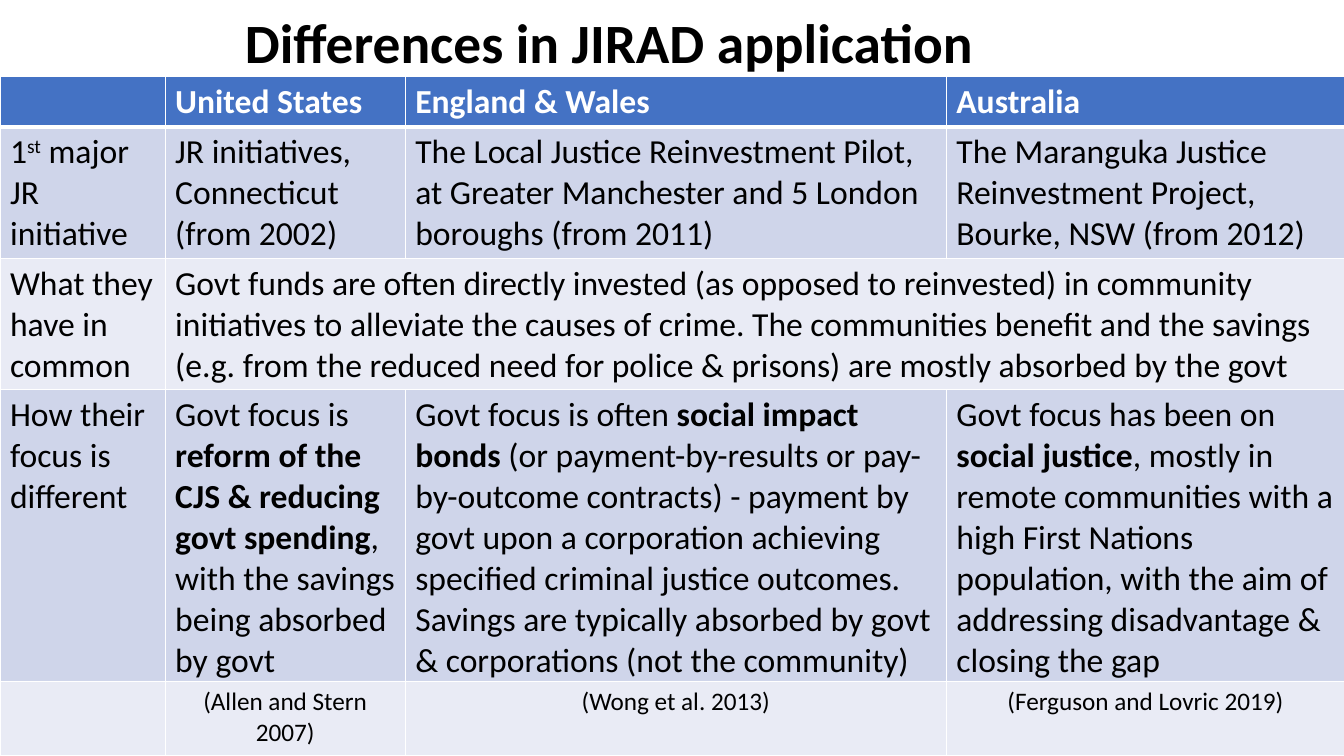
from dataclasses import dataclass
from typing import Any

from lxml.etree import SubElement
from pptx import Presentation
from pptx.dml.color import RGBColor
from pptx.enum.text import MSO_ANCHOR as Anchor, PP_ALIGN as Align
from pptx.oxml.ns import qn
from pptx.util import Pt

BLACK = RGBColor(0x00, 0x00, 0x00)
WHITE = RGBColor(0xFF, 0xFF, 0xFF)
HEADER_BLUE = RGBColor(0x44, 0x72, 0xC4)
BAND_DARK = RGBColor(0xCF, 0xD5, 0xEA)
BAND_LIGHT = RGBColor(0xE9, 0xEB, 0xF5)

COLUMN_WIDTHS = (118, 171.5, 386.5, 284.5)
TABLE_TOP = 54.7
RULE, HEADER_RULE = 1, 3


@dataclass(frozen=True)
class Span:
    text: str
    bold: bool = False
    raised: bool = False


Paragraph = tuple[Span, ...]
Entry = tuple[Paragraph, ...]


@dataclass(frozen=True)
class Row:
    height: float
    fill: RGBColor
    entries: tuple[Entry, ...]
    size: float = 24
    color: RGBColor = BLACK
    align: Align = Align.LEFT


def plain(*lines: str, bold: bool = False) -> Entry:
    return tuple((Span(line, bold),) for line in lines)


def emphasis(before: str, stressed: str, after: str) -> Entry:
    return ((Span(before), Span(stressed, bold=True), Span(after)),)


ROWS = (
    Row(35.5, HEADER_BLUE, (
        (),
        plain("United States", bold=True),
        plain("England & Wales", bold=True),
        plain("Australia", bold=True),
    ), color=WHITE),
    Row(91.5, BAND_DARK, (
        ((Span("1"), Span("st", raised=True), Span(" major JR initiative")),),
        plain("JR initiatives, Connecticut", "(from 2002)"),
        plain("The Local Justice Reinvestment Pilot, at Greater Manchester "
              "and 5 London boroughs (from 2011)"),
        plain("The Maranguka Justice Reinvestment Project, Bourke, NSW (from 2012)"),
    )),
    Row(91.5, BAND_LIGHT, (
        plain("What they have in common"),
        plain("Govt funds are often directly invested (as opposed to reinvested) in "
              "community initiatives to alleviate the causes of crime. The communities "
              "benefit and the savings (e.g. from the reduced need for police & prisons) "
              "are mostly absorbed by the govt"),
    )),
    Row(204, BAND_DARK, (
        plain("How their focus is different"),
        emphasis("Govt focus is ", "reform of the CJS & reducing govt spending",
                 ", with the savings being absorbed by govt"),
        emphasis("Govt focus is often ", "social impact bonds ",
                 "(or payment-by-results or pay-by-outcome contracts) - payment by govt "
                 "upon a corporation achieving specified criminal justice outcomes. "
                 "Savings are typically absorbed by govt & corporations (not the community)"),
        emphasis("Govt focus has been on ", "social justice",
                 ", mostly in remote communities with a high First Nations population, "
                 "with the aim of addressing disadvantage & closing the gap"),
    )),
    Row(53, BAND_LIGHT, (
        (),
        plain("(Allen and Stern 2007)"),
        plain("(Wong et al. 2013)"),
        plain("(Ferguson and Lovric 2019)"),
    ), size=18, align=Align.CENTER),
)


def apply(target: Any, values: dict[str, Any]) -> None:
    for name, value in values.items():
        setattr(target, name, value)


def write(frame: Any, entry: Entry, size: float, color: RGBColor,
          align: Align = Align.LEFT) -> None:
    for index, spans in enumerate(entry):
        paragraph = frame.add_paragraph() if index else frame.paragraphs[0]
        paragraph.alignment = align
        for span in spans:
            run = paragraph.add_run()
            run.text = span.text
            apply(run.font, {"name": "Calibri", "size": Pt(size), "bold": span.bold})
            run.font.color.rgb = color
            if span.raised:
                run.font._element.set("baseline", "30000")


def add_borders(cell: Any, row_index: int) -> None:
    properties = cell._tc.get_or_add_tcPr()
    widths = {
        "a:lnL": RULE,
        "a:lnR": RULE,
        "a:lnT": HEADER_RULE if row_index == 1 else RULE,
        "a:lnB": HEADER_RULE if row_index == 0 else RULE,
    }
    for tag, width in widths.items():
        line = SubElement(properties, qn(tag), w=str(Pt(width)))
        fill = SubElement(line, qn("a:solidFill"))
        SubElement(fill, qn("a:srgbClr"), val=str(WHITE))


def add_title(slide: Any) -> None:
    title = slide.shapes.add_textbox(Pt(167.8), Pt(10.8), Pt(785.5), Pt(43.9))
    frame = title.text_frame
    apply(frame, {"word_wrap": True, "vertical_anchor": Anchor.MIDDLE})
    write(frame, plain("Differences in JIRAD application", bold=True), 39.6, BLACK)
    frame.paragraphs[0].line_spacing = 0.9


def add_comparison(slide: Any) -> None:
    table = slide.shapes.add_table(
        len(ROWS), len(COLUMN_WIDTHS), Pt(0), Pt(TABLE_TOP),
        Pt(sum(COLUMN_WIDTHS)), Pt(sum(row.height for row in ROWS))).table
    for column, width in zip(table.columns, COLUMN_WIDTHS):
        column.width = Pt(width)
    for row_index, row in enumerate(ROWS):
        table.rows[row_index].height = Pt(row.height)
        for column_index in range(len(COLUMN_WIDTHS)):
            cell = table.cell(row_index, column_index)
            add_borders(cell, row_index)
            cell.fill.solid()
            cell.fill.fore_color.rgb = row.fill
        for column_index, entry in enumerate(row.entries):
            write(table.cell(row_index, column_index).text_frame, entry,
                  row.size, row.color, row.align)
        last_entry = len(row.entries) - 1
        last_column = len(COLUMN_WIDTHS) - 1
        if last_entry < last_column:
            table.cell(row_index, last_entry).merge(table.cell(row_index, last_column))


def main() -> None:
    deck = Presentation()
    apply(deck, {"slide_width": Pt(960), "slide_height": Pt(540)})
    slide = deck.slides.add_slide(deck.slide_layouts[6])
    add_title(slide)
    add_comparison(slide)
    deck.save("out.pptx")


if __name__ == "__main__":
    main()
